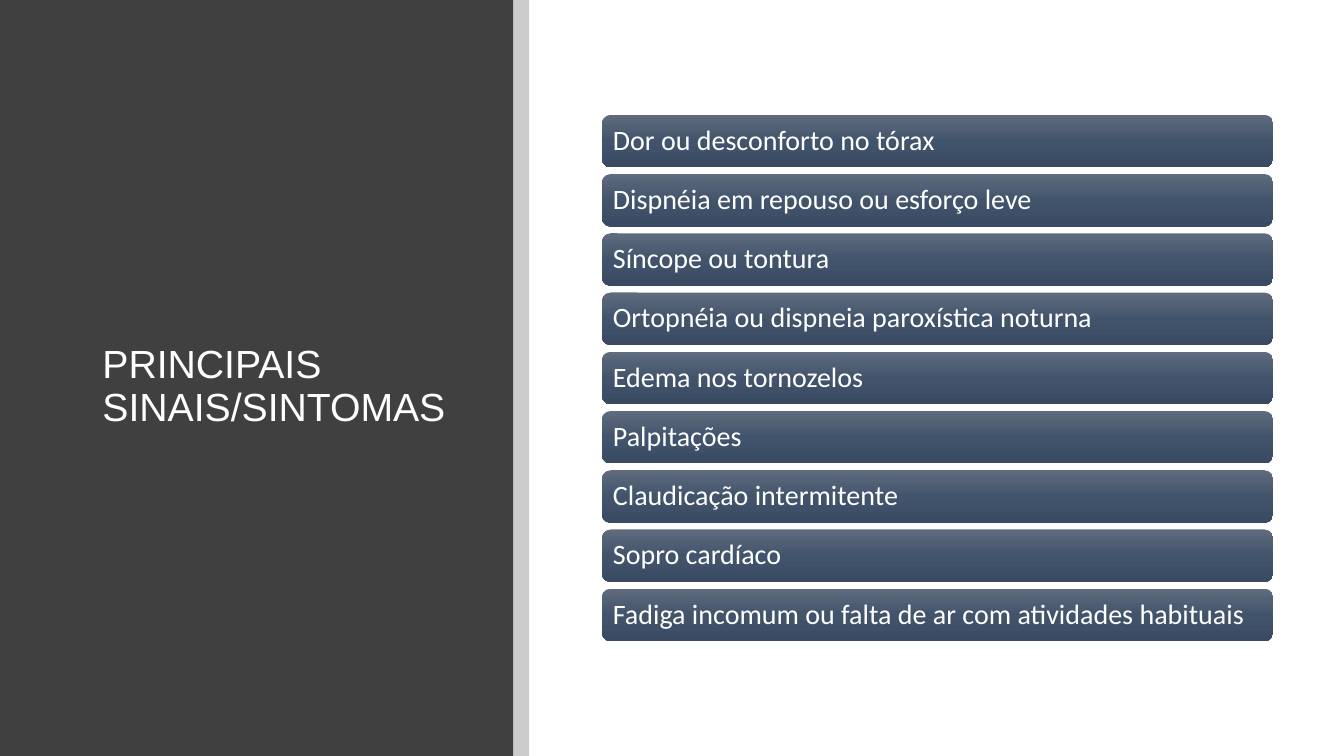
from copy import deepcopy

from pptx import Presentation
from pptx.dml.color import RGBColor
from pptx.enum.shapes import MSO_SHAPE
from pptx.enum.text import MSO_ANCHOR, MSO_AUTO_SIZE, PP_ALIGN
from pptx.oxml import parse_xml
from pptx.oxml.ns import nsdecls, qn
from pptx.util import Pt

WHITE = RGBColor(0xFF, 0xFF, 0xFF)
BLACK = RGBColor(0, 0, 0)
DARK = RGBColor(0x40, 0x40, 0x40)
SHADES = [
    (0, RGBColor(0x60, 0x6B, 0x7D)),
    (0.5, RGBColor(0x42, 0x54, 0x6C)),
    (1, RGBColor(0x39, 0x4A, 0x62)),
]
SIGNS = [
    "Dor ou desconforto no tórax",
    "Dispnéia em repouso ou esforço leve",
    "Síncope ou tontura",
    "Ortopnéia ou dispneia paroxística noturna",
    "Edema nos tornozelos",
    "Palpitações",
    "Claudicação intermitente",
    "Sopro cardíaco",
    "Fadiga incomum ou falta de ar com atividades habituais",
]


def add_box(shapes, kind, x, y, w, h):
    """Add a preset shape without line or shadow."""
    box = shapes.add_shape(kind, Pt(x), Pt(y), Pt(w), Pt(h))
    box.shadow.inherit = False
    box.line.fill.background()
    return box


def fill_flat(box, color):
    """Fill a shape with one colour."""
    box.fill.solid()
    box.fill.fore_color.rgb = color


def fill_shades(box):
    """Fill a shape with the three shades, from top to bottom."""
    box.fill.gradient()
    box.fill.gradient_angle = 270
    stops = box._element.spPr.find(qn("a:gradFill")).find(qn("a:gsLst"))
    stops.append(deepcopy(stops[-1]))
    for stop, (place, color) in zip(box.fill.gradient_stops, SHADES):
        stop.position = place
        stop.color.rgb = color


def set_text(frame, text, font, size):
    """Write one white, left-aligned paragraph, centred in height."""
    frame.text = text
    frame.word_wrap = True
    frame.auto_size = MSO_AUTO_SIZE.NONE
    frame.vertical_anchor = MSO_ANCHOR.MIDDLE
    para = frame.paragraphs[0]
    para.alignment = PP_ALIGN.LEFT
    para.line_spacing = 0.9
    style = para.runs[0].font
    style.name, style.size, style.color.rgb = font, Pt(size), WHITE


def add_panel(slide, x, y, w, h):
    """Draw the dark title panel with its grey edge band."""
    band = 11.5
    panel = add_box(slide.shapes, MSO_SHAPE.RECTANGLE, x, y, w - band, h)
    fill_flat(panel, DARK)
    edge = add_box(slide.shapes, MSO_SHAPE.RECTANGLE, x + w - band, y, band, h)
    fill_flat(edge, BLACK)
    tint = edge._element.spPr.find(qn("a:solidFill"))[0]
    tint.append(parse_xml(f'<a:alpha {nsdecls("a")} val="20000"/>'))

    title = slide.shapes.title
    panel._element.addnext(title._element)
    title.left, title.top = Pt(x + 66), Pt(y + 64)
    title.width, title.height = Pt(w - 115), Pt(h - 114.5)
    set_text(title.text_frame, "PRINCIPAIS SINAIS/SINTOMAS", "Arial", 28)


def add_list(slide, x, y, w, h):
    """Stack one rounded bar for each sign, evenly over the box."""
    tall = 37.5
    step = (h - tall) / (len(SIGNS) - 1)
    group = slide.shapes.add_group_shape()
    for i, sign in enumerate(SIGNS):
        bar = add_box(group.shapes, MSO_SHAPE.ROUNDED_RECTANGLE,
                      x, y + i * step, w, tall)
        fill_shades(bar)
        frame = bar.text_frame
        frame.margin_left = frame.margin_right = Pt(6)
        frame.margin_top = frame.margin_bottom = Pt(6)
        set_text(frame, sign, "Calibri", 20)


def main():
    """Build the slide and save it."""
    deck = Presentation()
    deck.slide_width, deck.slide_height = Pt(960), Pt(540)
    slide = deck.slides.add_slide(deck.slide_layouts[5])
    add_panel(slide, 0, 0, 378, 540)
    add_list(slide, 430, 82, 479.5, 376)
    deck.save("out.pptx")


if __name__ == "__main__":
    main()
